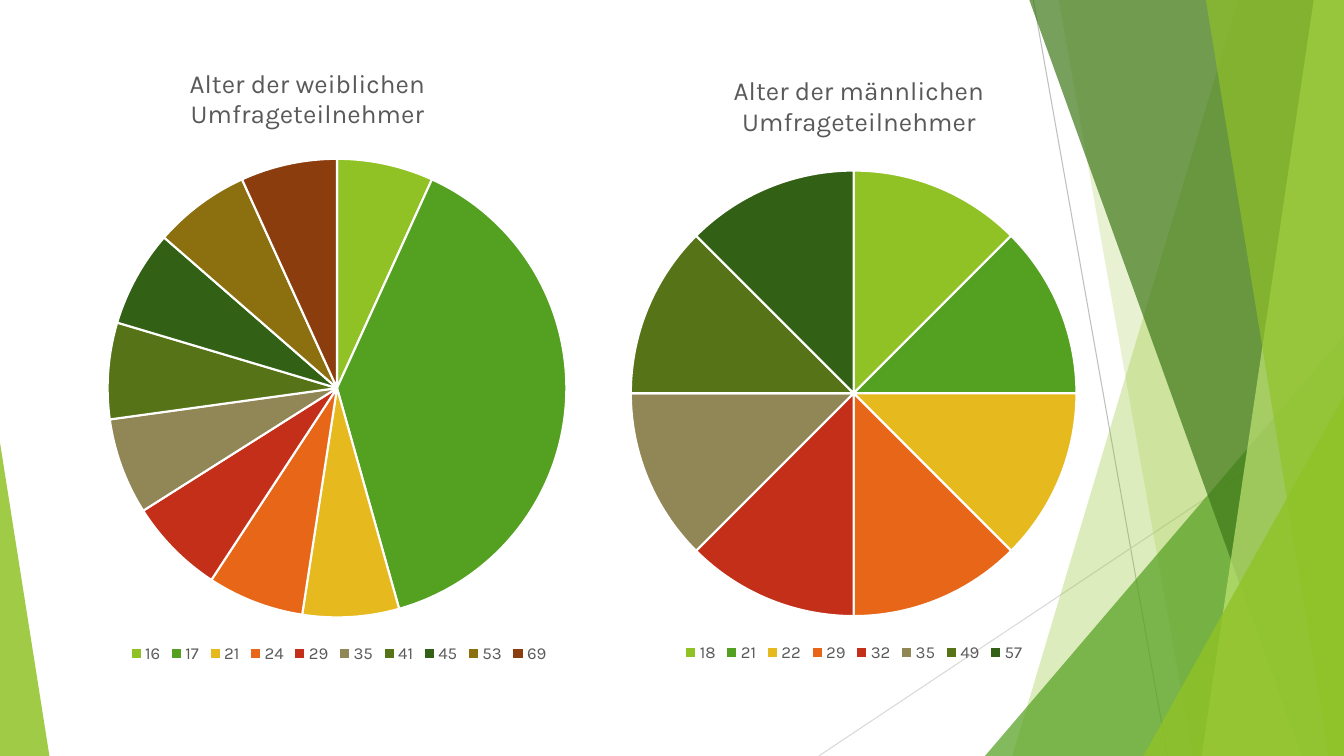
from pptx import Presentation
from pptx.chart.data import CategoryChartData
from pptx.dml.color import RGBColor
from pptx.enum.chart import XL_CHART_TYPE, XL_LEGEND_POSITION
from pptx.enum.shapes import MSO_CONNECTOR, MSO_SHAPE
from pptx.oxml import parse_xml
from pptx.oxml.ns import nsdecls, qn
from pptx.util import Inches, Pt

PIE = XL_CHART_TYPE.PIE
BOTTOM = XL_LEGEND_POSITION.BOTTOM
STRAIGHT = MSO_CONNECTOR.STRAIGHT
TRIANGLE = MSO_SHAPE.ISOSCELES_TRIANGLE

WIDTH, HEIGHT = Inches(13.33), Inches(7.5)
FONT = "Karla"
COLORS = {
    "lime": "90C226", "green": "54A021", "forest": "3F7819", "pale": "C0E474",
    "text": "595959", "white": "FFFFFF", "gray": "BFBFBF", "light gray": "D9D9D9",
}
SLICE_COLORS = {
    "lime": "90C226", "green": "54A021", "yellow": "E6B91E", "orange": "E76618",
    "red": "C42F1A", "khaki": "918655", "olive": "567417", "dark green": "326014",
    "ochre": "8C7010", "brown": "8B3D0E",
}


def across(percent):
    return round(WIDTH * percent / 100)


def down(percent):
    return round(HEIGHT * percent / 100)


def paint(shape, color, opacity):
    """Fill a shape without outline; opacity is in percent."""
    shape.shadow.inherit = False
    shape.line.fill.background()
    shape.fill.solid()
    shape.fill.fore_color.rgb = RGBColor.from_string(COLORS[color])
    color_element = shape.fill._xPr.find(qn("a:solidFill"))[0]
    color_element.append(
        parse_xml(f'<a:alpha {nsdecls("a")} val="{opacity * 1000}"/>'))


def add_thin_line(slide, start, end, color):
    line = slide.shapes.add_connector(
        STRAIGHT, across(start[0]), down(start[1]), across(end[0]), down(end[1]))
    line.line.color.rgb = RGBColor.from_string(COLORS[color])
    line.line.width = Pt(0.75)
    line._element.spPr.append(parse_xml(f'<a:effectLst {nsdecls("a")}/>'))


def add_panel(slide, top_x, bottom_x, color, opacity):
    """Full-height panel with a slanted left edge, ending at the right border."""
    builder = slide.shapes.build_freeform(across(top_x), 0)
    builder.add_line_segments(
        [(WIDTH, 0), (WIDTH, HEIGHT), (across(bottom_x), HEIGHT)], close=True)
    paint(builder.convert_to_shape(), color, opacity)


def add_corner(slide, left, top, right, apex, color, opacity):
    """Right triangle on the bottom border; apex is 0 (left) or 1 (right)."""
    corner = slide.shapes.add_shape(
        TRIANGLE, across(left), down(top), across(right - left), down(100 - top))
    corner.adjustments[0] = apex
    paint(corner, color, opacity)


def add_backdrop(slide):
    add_thin_line(slide, (76.89, 0), (86.87, 100), "gray")
    add_thin_line(slide, (100, 53.73), (60.92, 100), "light gray")
    add_panel(slide, 92.12, 75.32, "lime", 30)
    add_panel(slide, 78.77, 88.75, "lime", 20)
    add_corner(slide, 73.29, 44.4, 100, 1, "green", 72)
    add_panel(slide, 76.59, 96.85, "forest", 70)
    add_panel(slide, 97.75, 89.42, "pale", 70)
    add_panel(slide, 89.72, 98.87, "lime", 65)
    add_corner(slide, 85.07, 52.4, 100, 1, "lime", 80)
    add_corner(slide, 0, 58.53, 3.68, 0, "lime", 85)


def manual_layout(target="", **shares):
    """Chart layout element; shares x, y, w, h are percentages of the chart."""
    inner = f'<c:layoutTarget val="{target}"/>' if target else ""
    inner += "".join(f'<c:{key}Mode val="edge"/>' for key in "xy")
    inner += "".join(
        f'<c:{key} val="{share / 100:.4f}"/>' for key, share in shares.items())
    return parse_xml(f'<c:layout {nsdecls("c")}><c:manualLayout>{inner}'
                     "</c:manualLayout></c:layout>")


def remove_layout(element):
    for layout in element.findall(qn("c:layout")):
        element.remove(layout)


def style_font(font, size):
    font.name = FONT
    font.size = Pt(size)
    font.bold = False
    font.color.rgb = RGBColor.from_string(COLORS["text"])


def place_title(chart, text, x, y):
    chart.has_title = True
    title = chart.chart_title
    run = title.text_frame.paragraphs[0].add_run()
    run.text = text
    style_font(run.font, 18.6)
    title.include_in_layout = False
    remove_layout(title._element)
    title._element.find(qn("c:tx")).addnext(manual_layout(x=x, y=y))


def place_plot(chart, x, y, w, h):
    area = chart._chartSpace.chart.plotArea
    remove_layout(area)
    area.insert(0, manual_layout("inner", x=x, y=y, w=w, h=h))


def add_age_pie(slide, title, shares_by_age, box, title_at, plot_box):
    left, top, width, height = box
    data = CategoryChartData()
    data.categories = [str(age) for age in shares_by_age]
    data.add_series("Series 1", list(shares_by_age.values()))
    chart = slide.shapes.add_chart(
        PIE, across(left), down(top), across(width), down(height), data).chart
    style_font(chart.font, 12)
    place_title(chart, title, *title_at)
    place_plot(chart, *plot_box)
    chart.has_legend = True
    chart.legend.position = BOTTOM
    chart.legend.include_in_layout = False
    style_font(chart.legend.font, 12)
    plot = chart.plots[0]
    plot.vary_by_categories = True
    for index, color in zip(range(len(shares_by_age)), SLICE_COLORS.values()):
        slice_format = plot.series[0].points[index].format
        slice_format.fill.solid()
        slice_format.fill.fore_color.rgb = RGBColor.from_string(color)
        slice_format.line.color.rgb = RGBColor.from_string(COLORS["white"])
        slice_format.line.width = Pt(1.5)


def main():
    presentation = Presentation()
    presentation.slide_width, presentation.slide_height = WIDTH, HEIGHT
    slide = presentation.slides.add_slide(presentation.slide_layouts[6])
    add_backdrop(slide)

    female_ages = [16, 17, 21, 24, 29, 35, 41, 45, 53, 69]
    female_shares = dict.fromkeys(female_ages, 7) | {17: 40}
    add_age_pie(slide, "Alter der weiblichen Umfrageteilnehmer", female_shares,
                (2.93, 7.4, 44.56, 80.93), (24.3, 0.9), (11.4, 16.8, 76.6, 75))

    male_shares = dict.fromkeys([18, 21, 22, 29, 32, 35, 49, 57], 12)
    add_age_pie(slide, "Alter der männlichen Umfrageteilnehmer", male_shares,
                (42.31, 9.1, 42.46, 79.07), (28.1, 0), (10.9, 17, 78.1, 74.6))

    presentation.save("out.pptx")


if __name__ == "__main__":
    main()
